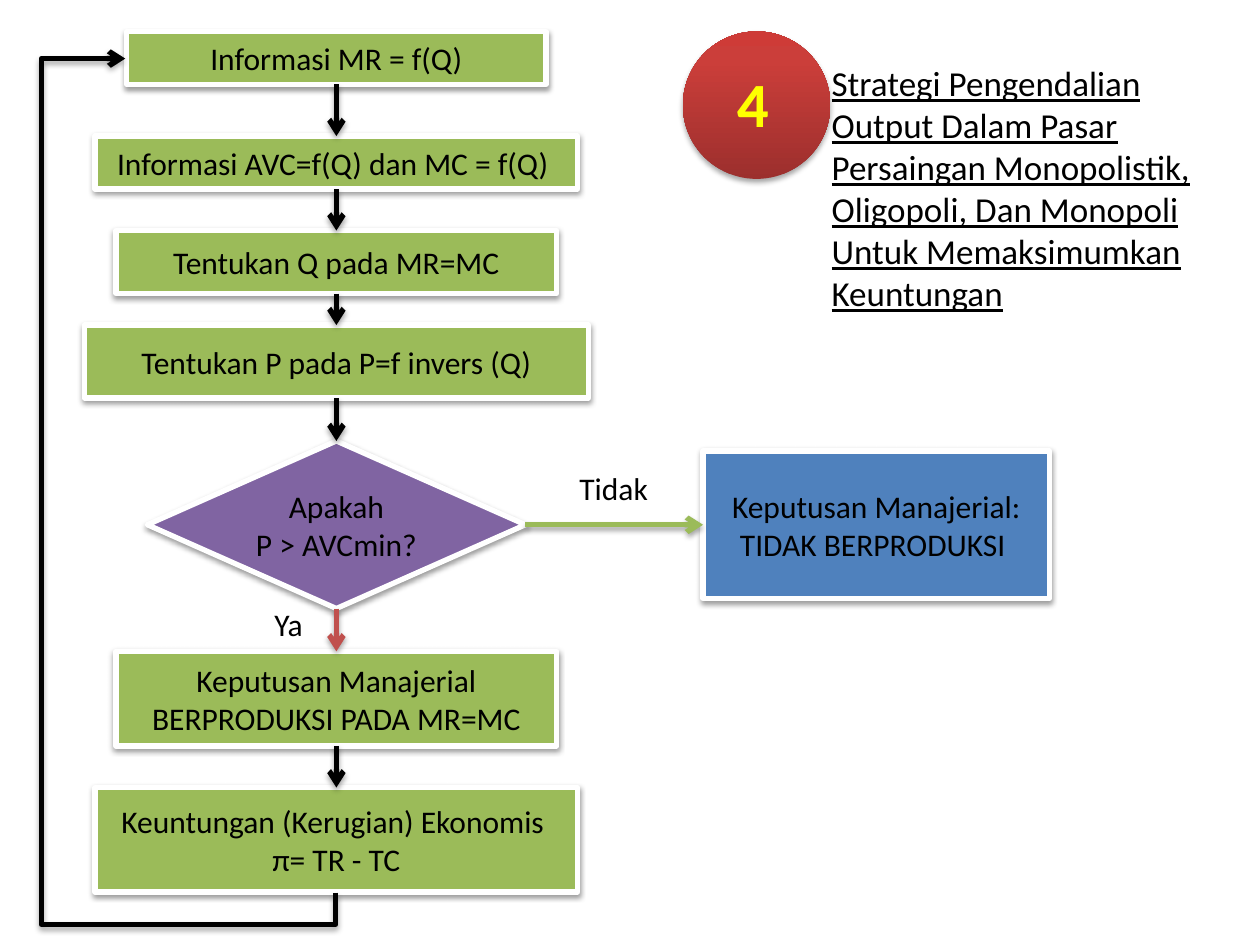
from copy import deepcopy
from dataclasses import dataclass
from itertools import pairwise

from pptx import Presentation
from pptx.dml.color import RGBColor
from pptx.enum.shapes import MSO_CONNECTOR as Link, MSO_SHAPE as Shape
from pptx.enum.text import MSO_ANCHOR as Anchor, MSO_AUTO_SIZE as Fit, PP_ALIGN as Align
from pptx.oxml import parse_xml
from pptx.oxml.ns import nsdecls, qn
from pptx.util import Inches, Pt


@dataclass(frozen=True)
class Theme:
    font: str = "Calibri"
    ink: str = "000000"
    paper: str = "FFFFFF"
    green: str = "9BBB59"
    purple: str = "8064A2"
    blue: str = "4F81BD"
    red: str = "C0504D"
    yellow: str = "FFFF00"
    amber: str = "FFC000"
    ball: tuple = ((0, "9C2F2D"), (0.8, "CB3E3A"), (1, "CE3B37"))
    body: int = 18
    title: int = 20
    number: int = 36
    stroke: int = 3


THEME = Theme()
AXIS = 2.67
STEPS = [
    ("Informasi MR = f(Q)", 0.25, 3.33, 0.42),
    ("Informasi AVC=f(Q) dan MC = f(Q) ", 1.08, 3.83, 0.42),
    ("Tentukan Q pada MR=MC", 1.83, 3.5, 0.5),
    ("Tentukan P pada P=f invers (Q)", 2.58, 4, 0.58),
    ("Apakah\nP > AVCmin?", 3.5, 3, 1.33),
    ("Keputusan Manajerial BERPRODUKSI PADA MR=MC", 5.17, 3.5, 0.75),
    ("Keuntungan (Kerugian) Ekonomis \nπ= TR - TC", 6.25, 3.83, 0.83),
]
DECISION = 4


def color(value):
    return RGBColor.from_string(value)


def write(shape, text, align=Align.LEFT, anchor=Anchor.TOP, wrap=True, ink=THEME.ink, **style):
    frame = shape.text_frame
    frame.text = text
    frame.word_wrap = wrap
    frame.vertical_anchor = anchor
    formats = {"name": THEME.font, "size": Pt(THEME.body), **style}
    for para in frame.paragraphs:
        para.alignment = align
        for span in para.runs:
            for name, value in formats.items():
                setattr(span.font, name, value)
            span.font.color.rgb = color(ink)


def cast_shadow(shape, distance, opacity):
    properties = shape._element.spPr
    for old in properties.findall(qn("a:effectLst")):
        properties.remove(old)
    properties.append(parse_xml(
        f'<a:effectLst {nsdecls("a")}><a:outerShdw blurRad="{Pt(3.1)}" dist="{Pt(distance)}" '
        f'dir="5400000" rotWithShape="0"><a:srgbClr val="{THEME.ink}">'
        f'<a:alpha val="{opacity * 1000}"/></a:srgbClr></a:outerShdw></a:effectLst>'))


def add_box(page, text, left, top, width, height, fill, kind=Shape.RECTANGLE):
    box = page.shapes.add_shape(kind, Inches(left), Inches(top), Inches(width), Inches(height))
    box.fill.solid()
    box.fill.fore_color.rgb = color(fill)
    box.line.color.rgb = color(THEME.paper)
    box.line.width = Pt(THEME.stroke)
    cast_shadow(box, 1.6, 38)
    write(box, text, Align.CENTER, Anchor.MIDDLE)
    return box


def add_label(page, text, left, top, width, height, **style):
    label = page.shapes.add_textbox(Inches(left), Inches(top), Inches(width), Inches(height))
    write(label, text, **style)
    return label


def add_arrow(page, start, end, ink=THEME.ink, sites=(2, 0), kind=Link.STRAIGHT):
    arrow = page.shapes.add_connector(kind, 0, 0, 0, 0)
    arrow.begin_connect(start, sites[0])
    arrow.end_connect(end, sites[1])
    arrow.line.color.rgb = color(ink)
    arrow.line.width = Pt(THEME.stroke)
    arrow.line._get_or_add_ln().append(parse_xml(f'<a:tailEnd {nsdecls("a")} type="arrow"/>'))
    cast_shadow(arrow, 1.8, 35)
    return arrow


def add_return_path(page, start, end):
    route = add_arrow(page, start, end, sites=(2, 1), kind=Link.ELBOW)
    frame = {"left": -1.48, "top": 2.94, "width": 6.62, "height": 1.67}
    for name, value in frame.items():
        setattr(route, name, Inches(value))
    properties = route._element.spPr
    turn = properties.find(qn("a:xfrm"))
    for name, value in {"rot": "5400000", "flipH": "1", "flipV": "0"}.items():
        turn.set(name, value)
    properties.replace(properties.find(qn("a:prstGeom")), parse_xml(
        f'<a:prstGeom {nsdecls("a")} prst="bentConnector4"><a:avLst>'
        '<a:gd name="adj1" fmla="val -3800"/><a:gd name="adj2" fmla="val 139900"/>'
        '</a:avLst></a:prstGeom>'))


def add_number(page, text):
    ball = page.shapes.add_shape(Shape.OVAL, Inches(5.42), Inches(0.25), Inches(1.17), Inches(1.17))
    ball.fill.gradient()
    ball.fill.gradient_angle = 90
    stops = ball._element.spPr.find(qn("a:gradFill")).find(qn("a:gsLst"))
    stops.append(deepcopy(stops[-1]))
    for stop, (position, value) in zip(ball.fill.gradient_stops, THEME.ball):
        stop.position = position
        stop.color.rgb = color(value)
    ball.line.fill.background()
    cast_shadow(ball, 1.8, 35)
    digit = add_label(page, text, 5.75, 0.46, 0.46, 0.71, wrap=False,
                      ink=THEME.yellow, size=Pt(THEME.number), bold=True)
    span = digit.text_frame.paragraphs[0].runs[0]._r.get_or_add_rPr()
    span.set("spc", "50")
    span.insert(0, parse_xml(
        f'<a:ln {nsdecls("a")} w="{Pt(0.9)}"><a:solidFill>'
        f'<a:srgbClr val="{THEME.amber}"/></a:solidFill></a:ln>'))


def add_title(page, text):
    title = page.shapes.title
    frame = {"left": 6.5, "top": 0.44, "width": 3.31, "height": 2.12}
    for name, value in frame.items():
        setattr(title, name, Inches(value))
    write(title, text, size=Pt(THEME.title), underline=True)
    title.text_frame.auto_size = Fit.SHAPE_TO_FIT_TEXT


def main():
    deck = Presentation()
    deck.slide_width, deck.slide_height = Inches(10), Inches(7.5)
    page = deck.slides.add_slide(deck.slide_layouts[5])
    add_title(page, "Strategi Pengendalian Output Dalam Pasar Persaingan Monopolistik, "
                    "Oligopoli, Dan Monopoli Untuk Memaksimumkan Keuntungan")

    steps = []
    for index, (text, top, width, height) in enumerate(STEPS):
        look = (THEME.purple, Shape.DIAMOND) if index == DECISION else (THEME.green,)
        steps.append(add_box(page, text, AXIS - width / 2, top, width, height, *look))
    stop = add_box(page, "Keputusan Manajerial:\nTIDAK BERPRODUKSI ",
                   5.58, 3.58, 2.75, 1.17, THEME.blue)
    add_label(page, "Tidak", 4.5, 3.67, 0.83, 0.4)
    add_label(page, "Ya", 2.08, 4.75, 0.5, 0.4)

    for index, (start, end) in enumerate(pairwise(steps)):
        add_arrow(page, start, end, THEME.red if index == DECISION else THEME.ink)
    add_arrow(page, steps[DECISION], stop, THEME.green, (3, 1))
    add_return_path(page, steps[-1], steps[0])
    add_number(page, "4")
    deck.save("out.pptx")


if __name__ == "__main__":
    main()
